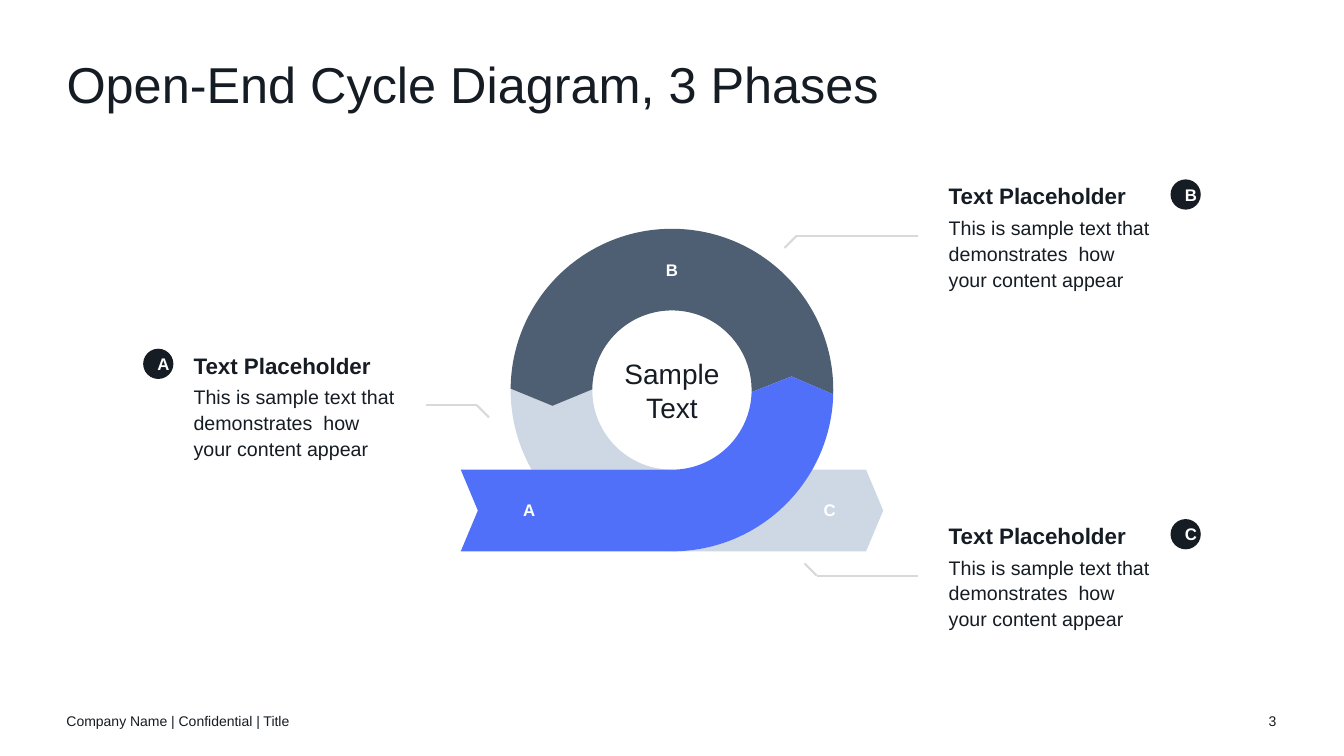
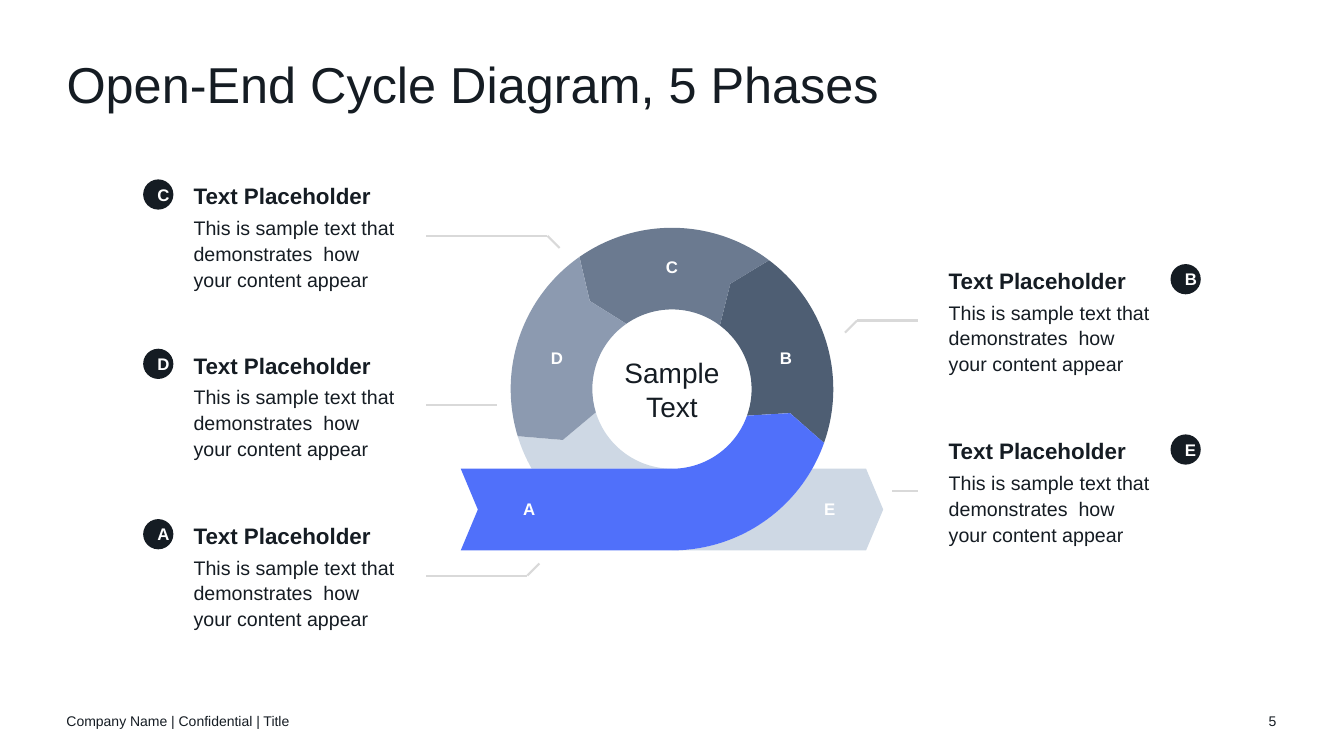
from dataclasses import dataclass
from math import asin, cos, degrees, radians, sin, tan

from lxml import etree
from pptx import Presentation
from pptx.dml.color import RGBColor
from pptx.enum import shapes, text
from pptx.oxml import ns
from pptx.util import Inches, Pt

FONT = "Arial"
INK = RGBColor(0x15, 0x1C, 0x23)
WHITE = RGBColor(0xFF, 0xFF, 0xFF)
LEADER_GREY = RGBColor(0xD9, 0xD9, 0xD9)
BLUE = RGBColor(0x50, 0x70, 0xFA)
PALE = RGBColor(0xCE, 0xD8, 0xE4)
SLATES = (RGBColor(0x4E, 0x5E, 0x73), RGBColor(0x6B, 0x7A, 0x90), RGBColor(0x8C, 0x9A, 0xB0))

FOOTER = "Company Name | Confidential | Title"
HEADING = "Text Placeholder"
BODY = "This is sample text that demonstrates  how your content appear"

MARGIN = 0.66
RING_WIDTH = 0.81
CHEVRON_TURN = 8
CHEVRON_DEPTH = 0.17
ROW_TOPS = (1.78, 2.62, 3.46, 4.31, 5.15)
LEADER_DROP = 0.56
LEADER_BEND = 0.12


@dataclass
class Side:
    text_left: float
    badge_left: float
    leader_left: float
    direction: int


LEFT = Side(1.92, 1.42, 4.23, 1)
RIGHT = Side(9.41, 11.61, 9.1, -1)


@dataclass
class Callout:
    """Bend is 1 for a leader that turns down, -1 for up, 0 for straight."""
    letter: str
    side: Side
    row: int
    leader_length: float
    bend: int


def write(frame, lines, size=12, color=INK, bold=False, align=text.PP_ALIGN.LEFT,
          spacing=None, after=None):
    """Fill a text frame; a line is a string or a (string, size, bold) tuple."""
    for number, line in enumerate(lines):
        words, line_size, line_bold = (line, size, bold) if isinstance(line, str) else line
        paragraph = frame.paragraphs[0] if number == 0 else frame.add_paragraph()
        paragraph.alignment = align
        if spacing is not None:
            paragraph.line_spacing = spacing
        if after is not None:
            paragraph.space_after = Pt(after)
        run = paragraph.add_run()
        run.text = words
        run.font.name = FONT
        run.font.size = Pt(line_size)
        run.font.bold = line_bold
        run.font.color.rgb = color


def clear_margins(frame, anchor, fit=text.MSO_AUTO_SIZE.NONE):
    frame.margin_left = frame.margin_top = frame.margin_right = frame.margin_bottom = 0
    frame.word_wrap = True
    frame.auto_size = fit
    frame.vertical_anchor = anchor


def add_text(slide, box, lines, fit=text.MSO_AUTO_SIZE.NONE, **text_format):
    shape = slide.shapes.add_textbox(*(Inches(length) for length in box))
    clear_margins(shape.text_frame, text.MSO_ANCHOR.MIDDLE, fit)
    write(shape.text_frame, lines, **text_format)


def paint(shape, color):
    shape.shadow.inherit = False
    shape.fill.solid()
    shape.fill.fore_color.rgb = color
    shape.line.fill.background()


def add_outline(slide, nodes, color):
    """Draw a closed outline; a node is (end,) for a line or (control, control, end)."""
    nodes = [[(Inches(x), Inches(y)) for x, y in node] for node in nodes]
    builder = slide.shapes.build_freeform(*nodes[0][-1])
    builder.add_line_segments([node[-1] for node in nodes[1:]], close=True)
    shape = builder.convert_to_shape()
    segments = shape._element.spPr.findall(".//" + ns.qn("a:lnTo"))
    for segment, node in zip(segments, nodes[1:]):
        if len(node) == 1:
            continue
        curve = etree.Element(ns.qn("a:cubicBezTo"))
        for x, y in node:
            etree.SubElement(curve, ns.qn("a:pt"), x=str(x - shape.left), y=str(y - shape.top))
        segment.getparent().replace(segment, curve)
    paint(shape, color)


def add_line(slide, start, end):
    line = slide.shapes.add_connector(
        shapes.MSO_CONNECTOR.STRAIGHT, *(Inches(length) for length in (*start, *end)))
    line.line.color.rgb = LEADER_GREY
    line.line.width = Pt(1.5)
    etree.SubElement(line._element.spPr, ns.qn("a:effectLst"))


def add_frame(presentation, title, number):
    """Add a slide with its title, footer and page number."""
    slide = presentation.slides.add_slide(presentation.slide_layouts[5])
    heading = slide.shapes.title
    heading.left, heading.top, heading.width, heading.height = (
        Inches(length) for length in (MARGIN, 0.59, 12, 0.6))
    clear_margins(heading.text_frame, text.MSO_ANCHOR.TOP)
    write(heading.text_frame, [title], size=36, spacing=0.9)
    add_text(slide, (MARGIN, 6.95, 4.5, 0.4), [FOOTER], size=10)
    add_text(slide, (12.16, 6.95, 0.5, 0.4), [str(number)], size=10,
             align=text.PP_ALIGN.RIGHT)
    return slide


def add_cycle(slide, box, letters, label_offsets, joints, colors):
    """Draw a ring that a band enters at the lower left and leaves at the lower right.

    Joints are in degrees, counter-clockwise from the right; label offsets run
    right and up from the ring's centre.
    """
    left, top, width, height = box
    right, bottom = left + width, top + height
    outer = height / 2
    inner = outer - RING_WIDTH
    middle = (outer + inner) / 2
    center_x, center_y = left + width / 2, top + outer
    band_top = bottom - RING_WIDTH
    band_middle = bottom - RING_WIDTH / 2
    band_angle = degrees(asin(inner / outer))

    def polar(radius, angle, tangent=0):
        """Point on a circle, moved along the tangent by a share of the radius."""
        turn = radians(angle)
        return (center_x + radius * (cos(turn) - tangent * sin(turn)),
                center_y - radius * (sin(turn) + tangent * cos(turn)))

    def arc(radius, start, end):
        """Nodes of an arc, cut where it crosses an axis of the ring."""
        low, high = sorted((start, end))
        cuts = [angle for angle in range(-90, 361, 90) if low + 3 < angle < high - 3]
        stops = sorted([low, *cuts, high], reverse=end < start)
        nodes = [(polar(radius, start),)]
        for first, last in zip(stops, stops[1:]):
            reach = 4 / 3 * tan(radians(last - first) / 4)
            nodes.append((polar(radius, first, reach), polar(radius, last, -reach),
                          polar(radius, last)))
        return nodes

    def corners(*points):
        return [(point,) for point in points]

    def chevron(angle):
        return corners(polar(middle, angle + CHEVRON_TURN))

    def add_label(letter, x, y):
        add_text(slide, (x - 0.15, y - 0.15, 0.3, 0.3), [letter], color=WHITE, bold=True,
                 align=text.PP_ALIGN.CENTER)

    add_outline(slide, arc(outer, 270, 360 - band_angle) + corners(
        (right - CHEVRON_DEPTH, band_top), (right, band_middle),
        (right - CHEVRON_DEPTH, bottom)), PALE)
    add_outline(slide, arc(outer, joints[-1], 180 + band_angle)
                + arc(inner, 270, joints[-1]) + chevron(joints[-1]), PALE)
    for start, end, color in zip(joints, joints[1:], colors):
        add_outline(slide, arc(outer, start, end) + chevron(end)
                    + arc(inner, end, start) + chevron(start), color)
    add_outline(slide, corners((left, bottom), (left + CHEVRON_DEPTH, band_middle),
                               (left, band_top))
                + arc(inner, -90, joints[0]) + chevron(joints[0])
                + arc(outer, joints[0], -90), BLUE)

    add_label(letters[0], left + 0.68, band_middle - 0.01)
    add_label(letters[-1], right - 0.53, band_middle - 0.01)
    for letter, (across, up) in zip(letters[1:-1], label_offsets):
        add_label(letter, center_x + across, center_y - up)
    add_text(slide, (center_x - 0.55, center_y - 0.55, 1.1, 1.1), ["Sample Text"], size=20,
             align=text.PP_ALIGN.CENTER)


def add_callout(slide, callout):
    side, top = callout.side, ROW_TOPS[callout.row]
    badge = slide.shapes.add_shape(
        shapes.MSO_SHAPE.OVAL, Inches(side.badge_left), Inches(top), Inches(0.3), Inches(0.3))
    paint(badge, INK)
    write(badge.text_frame, [callout.letter], color=WHITE, bold=True,
          align=text.PP_ALIGN.CENTER)
    add_text(slide, (side.text_left, top, 2, 1.11), [(HEADING, 16, True), (BODY, 14, False)],
             fit=text.MSO_AUTO_SIZE.SHAPE_TO_FIT_TEXT, spacing=1.1, after=3)

    y = top + LEADER_DROP
    elbow = side.leader_left + side.direction * callout.leader_length
    add_line(slide, (side.leader_left, y), (elbow, y))
    if callout.bend:
        add_line(slide, (elbow, y), (elbow + side.direction * LEADER_BEND,
                                     y + callout.bend * LEADER_BEND))


def add_cycle_slide(presentation, title, number, callouts, **cycle):
    slide = add_frame(presentation, title, number)
    letters = sorted(callout.letter for callout in callouts)
    add_cycle(slide, letters=letters, **cycle)
    for callout in callouts:
        add_callout(slide, callout)


def main():
    presentation = Presentation()
    presentation.slide_width = Inches(13.33)
    presentation.slide_height = Inches(7.5)
    add_cycle_slide(
        presentation, "Open-End Cycle Diagram, 3 Phases", 3,
        [Callout("A", LEFT, 2, 0.5, 1),
         Callout("B", RIGHT, 0, 1.2, 1),
         Callout("C", RIGHT, 4, 1, -1)],
        box=(4.57, 2.27, 4.19, 3.2), label_offsets=[(0, 1.19)],
        joints=(-1.5, 179.5), colors=SLATES[:1])
    add_cycle_slide(
        presentation, "Open-End Cycle Diagram, 5 Phases", 5,
        [Callout("C", LEFT, 0, 1.2, 1),
         Callout("D", LEFT, 2, 0.7, 0),
         Callout("A", LEFT, 4, 1, -1),
         Callout("B", RIGHT, 1, 0.6, 1),
         Callout("E", RIGHT, 3, 0.25, 0)],
        box=(4.57, 2.26, 4.19, 3.2), label_offsets=[(1.13, 0.31), (0, 1.21), (-1.14, 0.31)],
        joints=(-19.5, 53, 125, 197), colors=SLATES)
    presentation.save("out.pptx")


if __name__ == "__main__":
    main()
